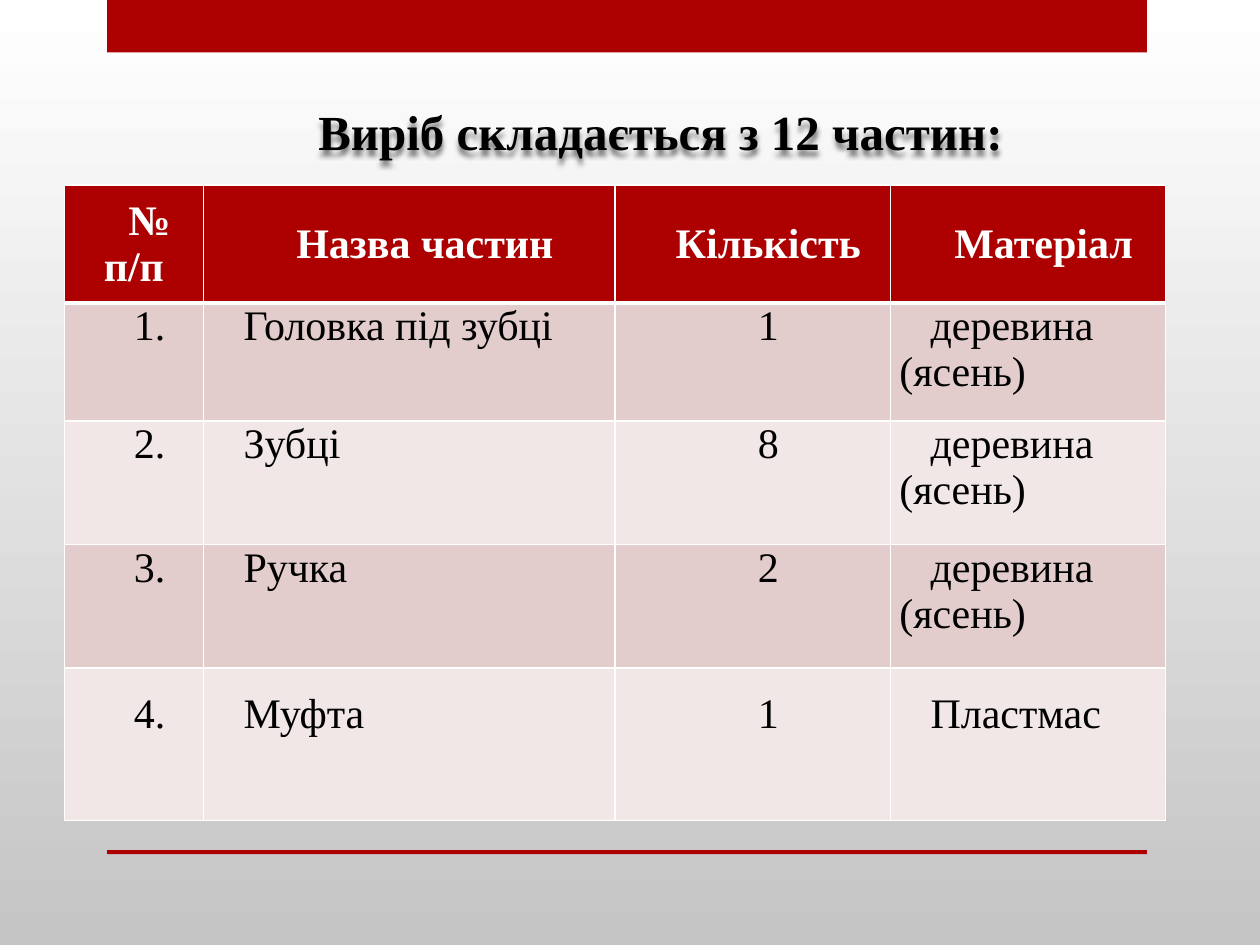
"""Build a slide listing the parts of a product in a table."""
from dataclasses import dataclass

from lxml import etree
from pptx import Presentation
from pptx.dml.color import RGBColor
from pptx.enum.shapes import MSO_SHAPE
from pptx.enum.text import MSO_ANCHOR, MSO_AUTO_SIZE, PP_ALIGN
from pptx.oxml import parse_xml
from pptx.oxml.ns import nsdecls
from pptx.util import Cm, Pt

RECTANGLE = MSO_SHAPE.RECTANGLE
TOP, MIDDLE = MSO_ANCHOR.TOP, MSO_ANCHOR.MIDDLE
LEFT, CENTER = PP_ALIGN.LEFT, PP_ALIGN.CENTER
GROW = MSO_AUTO_SIZE.SHAPE_TO_FIT_TEXT


@dataclass(frozen=True)
class Theme:
    """Colours, font and type sizes of the slide."""
    accent: str = "AD0101"
    white: str = "FFFFFF"
    black: str = "000000"
    shade: str = "C5C5C5"
    bands: tuple = ("E3CCCC", "F1E7E7")
    font: str = "Times New Roman"
    title_size: int = 28
    table_size: int = 24


@dataclass(frozen=True)
class Box:
    """Position and size in centimetres."""
    left: float
    top: float
    width: float
    height: float

    def lengths(self) -> list:
        """Return the four measures as lengths."""
        return [Cm(value) for value in (self.left, self.top, self.width, self.height)]


@dataclass(frozen=True)
class Part:
    """One table row with its height and line spacing."""
    number: str
    name: str
    amount: str
    material: str
    height: float
    spacing: float = 1.0

    def texts(self) -> tuple:
        """Return the cell texts in column order."""
        return self.number, self.name, self.amount, self.material


THEME = Theme()
INDENT = Cm(0.63)
WOOD = "деревина (ясень)"
TITLE = "Виріб складається з 12 частин:"
TITLE_BOX = Box(1.9, 1.32, 22.2, 2.06)
BANDS = (Box(2.16, 0, 20.96, 1.06), Box(2.16, 17.14, 20.96, 0.08))
TABLE_BOX = Box(1.3, 3.73, 22.2, 12.81)
COLUMN_WIDTHS = (2.8, 8.3, 5.55, 5.55)
COLUMN_ALIGNMENTS = (CENTER, LEFT, CENTER, LEFT)
ROWS = (
    Part("№ п/п", "Назва частин", "Кількість", "Матеріал", 2.38),
    Part("1.", "Головка під зубці", "1", WOOD, 2.38),
    Part("2.", "Зубці", "8", WOOD, 2.49),
    Part("3.", "Ручка", "2", WOOD, 2.49),
    Part("4.", "Муфта", "1", "Пластмас", 3.07, 1.5),
)


def apply(target, values: dict) -> None:
    """Set each named attribute of the target."""
    for name, value in values.items():
        setattr(target, name, value)


def write_text(frame, text: str, size: int, color: str, bold: bool,
               alignment, spacing: float) -> None:
    """Write one paragraph with a first-line indent."""
    para = frame.paragraphs[0]
    apply(para, {"alignment": alignment, "line_spacing": spacing})
    properties = para._p.get_or_add_pPr()
    properties.set("marL", "0")
    properties.set("indent", str(INDENT))
    span = para.add_run()
    span.text = text
    apply(span.font, {"name": THEME.font, "size": Pt(size), "bold": bold})
    span.font.color.rgb = RGBColor.from_string(color)


def paint_background(page) -> None:
    """Fill the page with a vertical gradient."""
    fill = page.background.fill
    fill.gradient()
    fill.gradient_angle = 270
    for stop, position, color in zip(fill.gradient_stops, (0, 1), (THEME.white, THEME.shade)):
        stop.position = position
        stop.color.rgb = RGBColor.from_string(color)


def draw_band(page, box: Box) -> None:
    """Draw a plain accent band."""
    band = page.shapes.add_shape(RECTANGLE, *box.lengths())
    band.shadow.inherit = False
    band.fill.solid()
    band.fill.fore_color.rgb = RGBColor.from_string(THEME.accent)
    band.line.fill.background()


def draw_title(page) -> None:
    """Place the title with a soft shadow."""
    title = page.shapes.title
    apply(title, dict(zip(("left", "top", "width", "height"), TITLE_BOX.lengths())))
    apply(title.text_frame, {"word_wrap": True, "auto_size": GROW, "vertical_anchor": TOP})
    write_text(title.text_frame, TITLE, THEME.title_size, THEME.black, True, CENTER, 1.5)
    title._element.spPr.append(parse_xml(
        f'<a:effectLst {nsdecls("a")}><a:outerShdw blurRad="38100" dist="38100" dir="5400000">'
        f'<a:srgbClr val="{THEME.black}"><a:alpha val="50000"/></a:srgbClr>'
        '</a:outerShdw></a:effectLst>'))


def set_borders(cell, top: int, bottom: int) -> None:
    """Give a cell white borders with widths in points."""
    properties = cell._tc.get_or_add_tcPr()
    widths = {"lnL": 1, "lnR": 1, "lnT": top, "lnB": bottom}
    for index, (side, width) in enumerate(widths.items()):
        line = parse_xml(f'<a:{side} {nsdecls("a")} w="{Pt(width)}"><a:solidFill/></a:{side}>')
        etree.SubElement(line[0], f"{{{line.nsmap['a']}}}srgbClr", val=THEME.white)
        properties.insert(index, line)


def draw_table(page) -> None:
    """Draw the table of parts."""
    table = page.shapes.add_table(len(ROWS), len(COLUMN_WIDTHS), *TABLE_BOX.lengths()).table
    for column, width in zip(table.columns, COLUMN_WIDTHS):
        column.width = Cm(width)
    for index, part in enumerate(ROWS):
        header = index == 0
        table.rows[index].height = Cm(part.height)
        background = THEME.accent if header else THEME.bands[(index - 1) % 2]
        for cell, text, alignment in zip(table.rows[index].cells, part.texts(), COLUMN_ALIGNMENTS):
            apply(cell, {"margin_left": Cm(0.18), "margin_right": Cm(0.18),
                         "margin_top": 0, "margin_bottom": 0,
                         "vertical_anchor": MIDDLE if header else TOP})
            cell.fill.solid()
            cell.fill.fore_color.rgb = RGBColor.from_string(background)
            set_borders(cell, 3 if index == 1 else 1, 3 if header else 1)
            write_text(cell.text_frame, text, THEME.table_size,
                       THEME.white if header else THEME.black, header,
                       CENTER if header else alignment, part.spacing)


def main() -> None:
    """Create and save the deck."""
    deck = Presentation()
    apply(deck, {"slide_width": Cm(25.4), "slide_height": Cm(19.05)})
    page = deck.slides.add_slide(deck.slide_layouts[5])
    paint_background(page)
    for box in BANDS:
        draw_band(page, box)
    draw_table(page)
    draw_title(page)
    deck.save("out.pptx")


if __name__ == "__main__":
    main()
